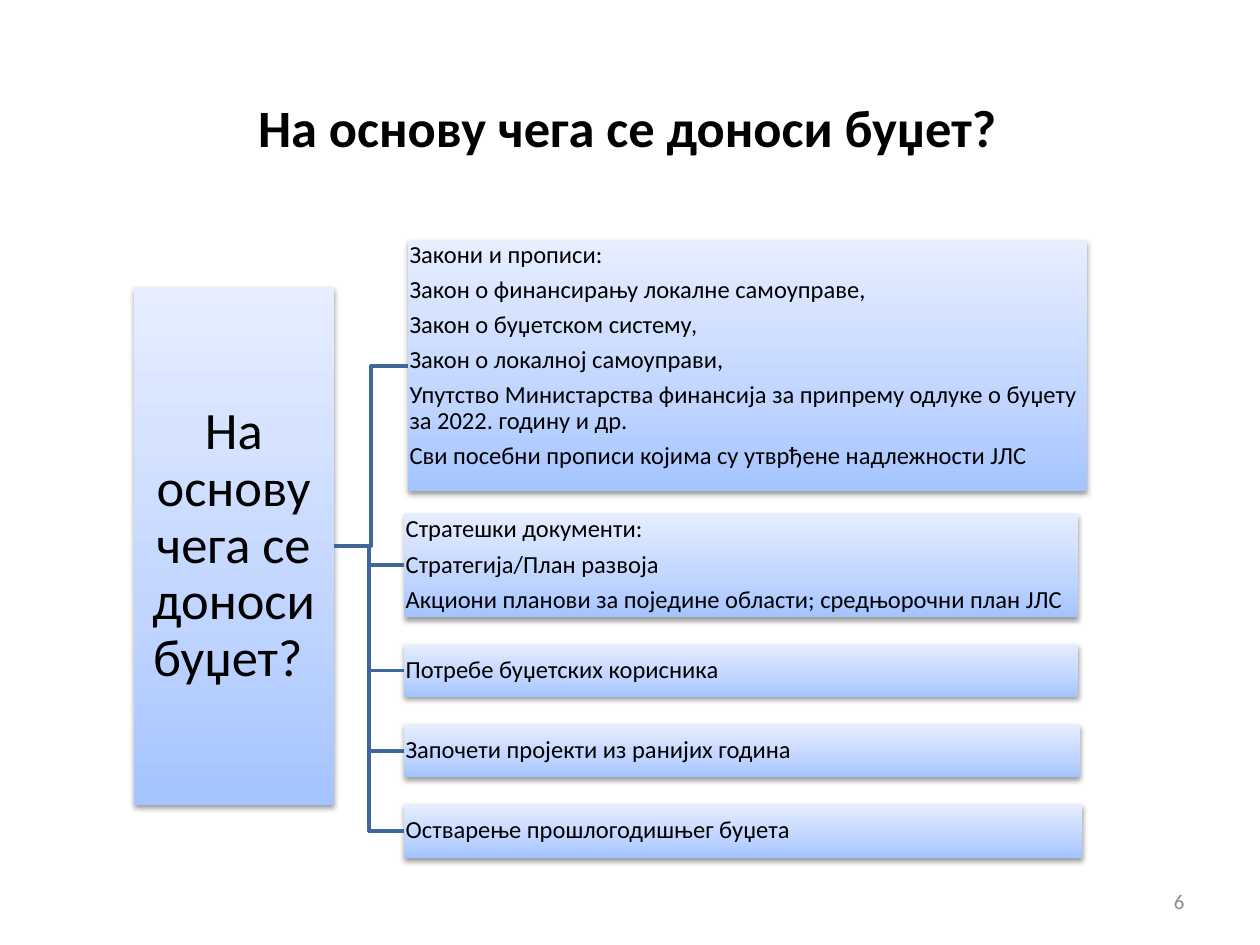
from lxml import etree
from pptx import Presentation
from pptx.dml.color import RGBColor
from pptx.enum.shapes import MSO_CONNECTOR, MSO_SHAPE
from pptx.enum.text import MSO_ANCHOR, PP_ALIGN
from pptx.oxml import parse_xml
from pptx.oxml.ns import qn
from pptx.util import Inches, Pt

LEFT, CENTER, RIGHT = PP_ALIGN.LEFT, PP_ALIGN.CENTER, PP_ALIGN.RIGHT
TOP, MIDDLE = MSO_ANCHOR.TOP, MSO_ANCHOR.MIDDLE
RECT, ELBOW = MSO_SHAPE.RECTANGLE, MSO_CONNECTOR.ELBOW
NS = 'xmlns:a="http://schemas.openxmlformats.org/drawingml/2006/main"'
STOPS = [(0, "A4C4FF"), (35, "BFD4FF"), (100, "E6EEFF")]


def color(code):
    return RGBColor.from_string(code)


def write(shape, lines, size, align, anchor, inset, bold=False, ink="000000", after=0, space=1.0):
    frame = shape.text_frame
    frame.word_wrap = True
    frame.vertical_anchor = anchor
    for side in ("left", "right", "top", "bottom"):
        setattr(frame, "margin_" + side, Inches(inset))
    frame.text = "\n".join(lines)
    look = {"size": Pt(size), "name": "Calibri", "bold": bold}
    for para in frame.paragraphs:
        para.alignment = align
        para.line_spacing = space
        para.space_after = Pt(after)
        font = para.runs[0].font
        for key, value in look.items():
            setattr(font, key, value)
        font.color.rgb = color(ink)


deck = Presentation()
deck.slide_width, deck.slide_height = Inches(10), Inches(7.5)
slide = deck.slides.add_slide(deck.slide_layouts[6])
shapes = slide.shapes

# Title and page number
title = shapes.add_textbox(Inches(0.48), Inches(0.54), Inches(9), Inches(0.93))
write(title, ["На основу чега се доноси буџет?"], 30, CENTER, MIDDLE, 0.1, bold=True)
page = shapes.add_textbox(Inches(7.17), Inches(6.95), Inches(2.33), Inches(0.4))
write(page, ["6"], 12, RIGHT, MIDDLE, 0.1, ink="8C8C8C")

# Boxes: place, text size, alignment, anchor, inset, lines; the root comes first
boxes = [
    ((1.06, 2.28, 1.59, 4.11), 30, CENTER, MIDDLE, 0.02,
     ["На основу чега се доноси буџет? "]),
    ((3.24, 1.91, 5.39, 1.99), 14, LEFT, TOP, 0.01,
     ["Закони и прописи:",
      "Закон о финансирању локалне самоуправе,",
      "Закон о буџетском систему,",
      "Закон о локалној самоуправи,",
      "Упутство Министарства финансија за припрему одлуке о буџету за 2022. годину и др.",
      "Сви посебни прописи којима су утврђене надлежности ЈЛС"]),
    ((3.21, 4.07, 5.35, 0.83), 14, LEFT, MIDDLE, 0.01,
     ["Стратешки документи:",
      "Стратегија/План развоја",
      "Акциони планови за поједине области; средњорочни план ЈЛС"]),
    ((3.21, 5.11, 5.35, 0.42), 14, LEFT, MIDDLE, 0.01, ["Потребе буџетских корисника"]),
    ((3.21, 5.75, 5.36, 0.42), 14, LEFT, MIDDLE, 0.01, ["Започети пројекти из ранијих година"]),
    ((3.21, 6.38, 5.38, 0.43), 14, LEFT, MIDDLE, 0.01, ["Остварење прошлогодишњег буџета"]),
]
stops = "".join(f'<a:gs pos="{pos * 1000}"><a:srgbClr val="{code}"/></a:gs>' for pos, code in STOPS)
nodes = []
for place, size, align, anchor, inset, lines in boxes:
    box = shapes.add_shape(RECT, *[Inches(n) for n in place])
    box.line.fill.background()
    box.shadow.inherit = False
    # Three-stop gradient, dark at the bottom, and a soft shadow below
    props = box._element.spPr
    props.find(qn("a:prstGeom")).addnext(parse_xml(
        f'<a:gradFill {NS} rotWithShape="1"><a:gsLst>{stops}</a:gsLst>'
        '<a:lin ang="16200000" scaled="0"/></a:gradFill>'))
    props.find(qn("a:effectLst")).append(parse_xml(
        f'<a:outerShdw {NS} blurRad="40000" dist="20000" dir="5400000" rotWithShape="0">'
        '<a:srgbClr val="000000"><a:alpha val="38000"/></a:srgbClr></a:outerShdw>'))
    write(box, lines, size, align, anchor, inset, after=size * 0.35, space=0.9)
    nodes.append(box)

# Elbow lines from the root to each branch
root, *leaves = nodes
for leaf in leaves:
    link = shapes.add_connector(ELBOW, 0, 0, 0, 0)
    link.begin_connect(root, 3)
    link.end_connect(leaf, 1)
    link.line.width = Pt(2)
    link.line.color.rgb = color("3F6797")
    etree.SubElement(link._element.spPr, qn("a:effectLst"))

deck.save("out.pptx")
